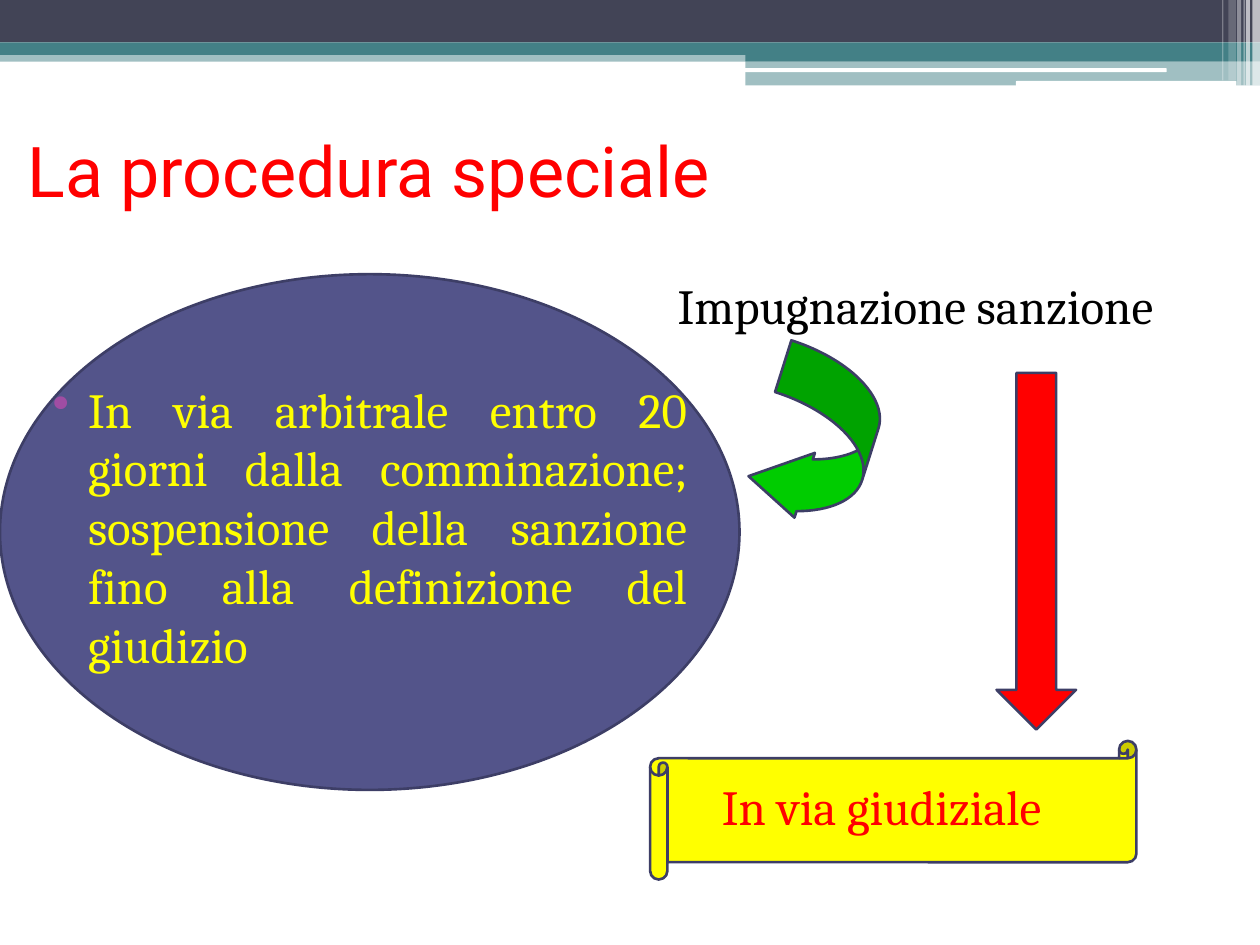
from typing import NamedTuple, Optional

import pptx
import pptx.dml.color
import pptx.enum.shapes
import pptx.enum.text
import pptx.oxml
import pptx.oxml.ns
import pptx.util

Pt = pptx.util.Pt
Kind = pptx.enum.shapes.MSO_SHAPE
Align = pptx.enum.text.PP_ALIGN
Anchor = pptx.enum.text.MSO_ANCHOR


class Theme(NamedTuple):
    dark: str = "424456"
    teal: str = "438086"
    white: str = "FFFFFF"
    black: str = "000000"
    edge: str = "3D3E66"
    violet: str = "53548A"
    dot: str = "A04DA3"
    red: str = "FF0000"
    yellow: str = "FFFF00"
    green: str = "00CC00"
    head: str = "Roboto"
    body: str = "Cambria"
    large: int = 40
    small: int = 28
    line: float = 1.5


THEME = Theme()


class Box(NamedTuple):
    left: float
    top: float
    width: float
    height: float


class Form(NamedTuple):
    box: Box
    fill: str
    kind: int = Kind.RECTANGLE
    alpha: int = 100
    edge: bool = False
    turn: float = 0
    adjust: tuple = ()


class Label(NamedTuple):
    box: Box
    text: str
    color: str
    font: str = THEME.body
    size: int = THEME.small
    align: int = Align.LEFT
    anchor: int = Anchor.TOP
    margin: float = 0
    indent: float = 0
    before: float = 3
    bullet: Optional[str] = None


def stripe(left: float, width: float, height: float, alpha: int) -> Form:
    """Pale vertical line at the right end of the banner."""
    return Form(Box(left, 0, width, height), THEME.white, alpha=alpha)


BANNER = [
    Form(Box(0, 28.8, 720, 6.5), THEME.teal, alpha=50),
    Form(Box(0, 0, 720, 24.2), THEME.dark),
    Form(Box(0, 24.2, 720, 7.2), THEME.teal),
    Form(Box(426, 28, 294, 7), THEME.teal),
    Form(Box(426, 34.8, 294, 14), THEME.teal, alpha=50),
    Form(Box(425.5, 39, 241.2, 2.2), THEME.white, Kind.ROUNDED_RECTANGLE),
    Form(Box(580.5, 46.3, 126, 2.9), THEME.white, Kind.ROUNDED_RECTANGLE),
    stripe(715.7, 4.3, 49, 65),
    stripe(712, 2.2, 49, 65),
    stripe(710.6, 0.7, 49, 60),
    stripe(707, 2.2, 49, 40),
    stripe(702, 4.3, 46, 20),
    stripe(698.4, 0.7, 46, 30),
]

BACK = [
    Form(Box(371.5, 423.4, 277.9, 79.2), THEME.yellow, Kind.HORIZONTAL_SCROLL, edge=True),
    Form(Box(0, 156.7, 422.6, 294.7), THEME.violet, Kind.OVAL, edge=True),
]

LABELS = [
    Label(Box(8.6, 54.7, 648, 84.2), "La procedura speciale", THEME.red,
          THEME.head, THEME.large, anchor=Anchor.MIDDLE, before=0),
    Label(Box(14.4, 213.1, 385.2, 181.4),
          "In via arbitrale entro 20 giorni dalla comminazione; "
          "sospensione della sanzione fino alla definizione del giudizio",
          THEME.yellow, align=Align.JUSTIFY, margin=28.8, indent=-20.2,
          bullet=THEME.dot),
    Label(Box(371.5, 154.1, 319.7, 41), "Impugnazione sanzione", THEME.black,
          margin=28.8, indent=-20.2),
    Label(Box(380.2, 439.9, 221.8, 41), "In via giudiziale", THEME.red,
          align=Align.RIGHT, margin=8.6),
]

ARROWS = [
    Form(Box(435.6, 201.6, 62.6, 100.8), THEME.green, Kind.CURVED_LEFT_ARROW,
         edge=True, turn=17.5, adjust=(0.495, 0.62, 0.514)),
    Form(Box(569.5, 213.1, 45.4, 203.8), THEME.red, Kind.DOWN_ARROW, edge=True),
]


def rgb(code: str) -> pptx.dml.color.RGBColor:
    return pptx.dml.color.RGBColor.from_string(code)


def add(parent, tag: str, **attrs):
    node = pptx.oxml.ns.qn(tag)
    child = parent.makeelement(node, attrs)
    parent.append(child)
    return child


def draw(slide, form: Form) -> None:
    shape = slide.shapes.add_shape(form.kind, *map(Pt, form.box))
    shape.shadow.inherit = False
    shape.rotation = form.turn
    shape.fill.solid()
    shape.fill.fore_color.rgb = rgb(form.fill)
    if form.alpha < 100:
        color = shape.fill._xPr.find(".//" + pptx.oxml.ns.qn("a:srgbClr"))
        add(color, "a:alpha", val=str(form.alpha * 1000))
    if form.edge:
        shape.line.color.rgb = rgb(THEME.edge)
        shape.line.width = Pt(THEME.line)
    else:
        shape.line.fill.background()
    for spot, value in enumerate(form.adjust):
        shape.adjustments[spot] = value


def write(slide, label: Label) -> None:
    frame = slide.shapes.add_textbox(*map(Pt, label.box)).text_frame
    frame.word_wrap = True
    frame.vertical_anchor = label.anchor
    frame.text = label.text
    para = frame.paragraphs[0]
    para.alignment = label.align
    para.space_before = Pt(label.before)
    props = para._p.get_or_add_pPr()
    props.set("marL", str(Pt(label.margin)))
    props.set("indent", str(Pt(label.indent)))
    if label.bullet:
        add(add(props, "a:buClr"), "a:srgbClr", val=label.bullet)
        add(props, "a:buChar", char="•")
    font = para.runs[0].font
    font.name = label.font
    font.size = Pt(label.size)
    font.color.rgb = rgb(label.color)


def main() -> None:
    deck = pptx.Presentation()
    deck.slide_width, deck.slide_height = Pt(720), Pt(540)
    slide = deck.slides.add_slide(deck.slide_layouts[6])
    for form in BANNER + BACK:
        draw(slide, form)
    for label in LABELS:
        write(slide, label)
    for form in ARROWS:
        draw(slide, form)
    deck.save("out.pptx")


if __name__ == "__main__":
    main()
